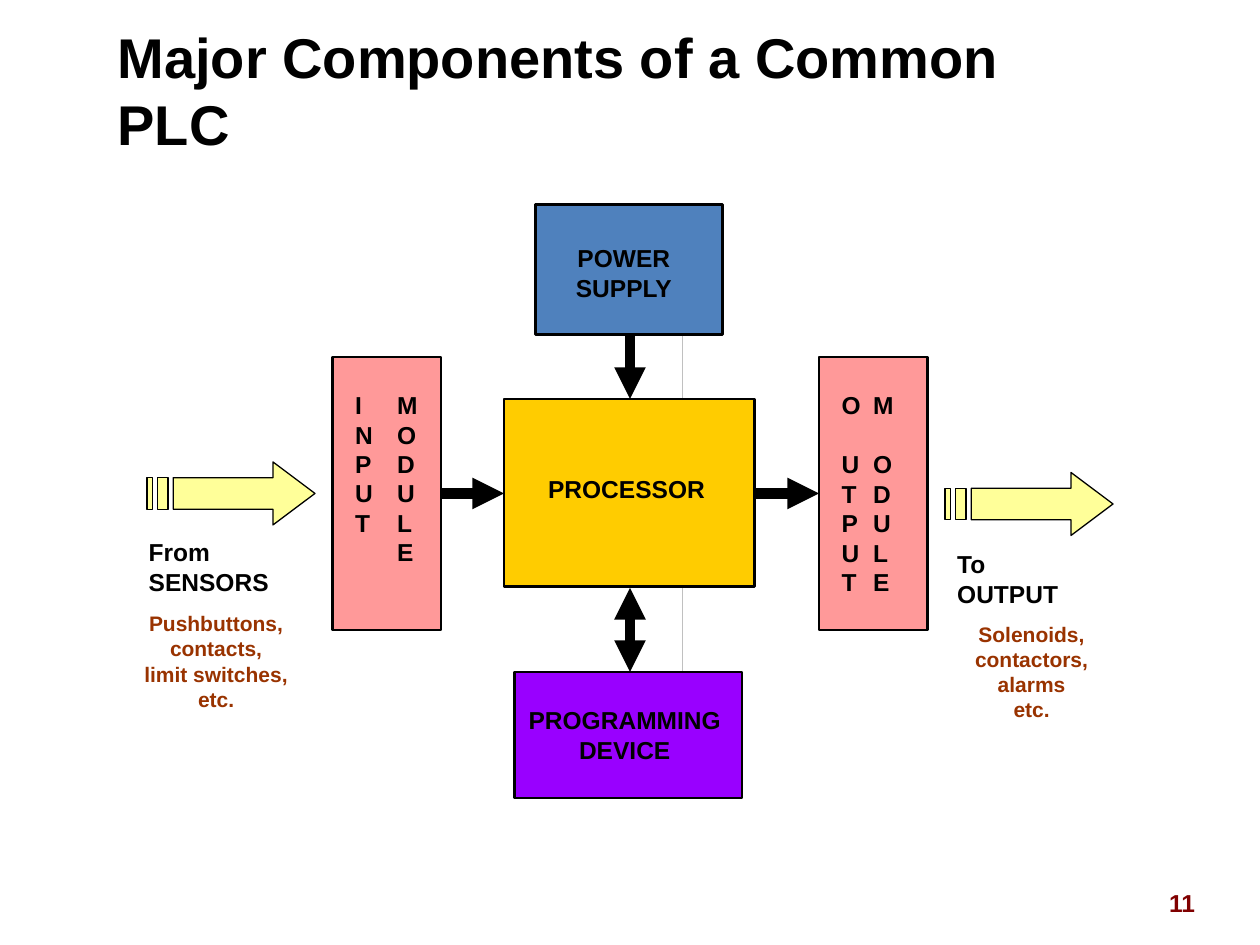
from dataclasses import dataclass

from lxml import etree
from pptx import Presentation
from pptx.dml.color import RGBColor
from pptx.enum.shapes import MSO_CONNECTOR, MSO_SHAPE
from pptx.enum.text import MSO_ANCHOR, MSO_AUTO_SIZE, PP_ALIGN
from pptx.oxml.ns import qn
from pptx.util import Pt

LEFT, MID, RIGHT = PP_ALIGN.LEFT, PP_ALIGN.CENTER, PP_ALIGN.RIGHT
TOP = MSO_ANCHOR.TOP
NO_FIT = MSO_AUTO_SIZE.NONE
RECT = MSO_SHAPE.RECTANGLE
STRAIGHT = MSO_CONNECTOR.STRAIGHT


@dataclass(frozen=True)
class Theme:
    font: str = "Arial"
    ink: str = "000000"
    page: str = "800000"
    note: str = "993300"
    power: str = "4F81BD"
    core: str = "FFCC00"
    module: str = "FF9999"
    device: str = "9900FF"
    flow: str = "FFFF99"
    rule: str = "C0C0C0"
    head: int = 32
    body: int = 14
    small: int = 12


THEME = Theme()


def rgb(code):
    return RGBColor.from_string(code)


def write(frame, text, size=THEME.body, color=THEME.ink, align=LEFT,
          inset=(1, 1), tab=None, gap=0):
    """Fill a frame; tab sets a second column, gap the space below line one."""
    frame.text = text
    frame.word_wrap = True
    frame.auto_size = NO_FIT
    frame.vertical_anchor = TOP
    frame.margin_left = frame.margin_right = Pt(inset[0])
    frame.margin_top = frame.margin_bottom = Pt(inset[1])
    for row, para in enumerate(frame.paragraphs):
        para.alignment = align
        if gap and row == 0:
            para.space_after = Pt(gap)
        if tab:
            stops = etree.SubElement(para._p.get_or_add_pPr(), qn("a:tabLst"))
            etree.SubElement(stops, qn("a:tab"), pos=str(Pt(tab)), algn="l")
        for run in para.runs:
            run.font.name = THEME.font
            run.font.size = Pt(size)
            run.font.bold = True
            run.font.color.rgb = rgb(color)


def label(slide, area, text, **style):
    box = slide.shapes.add_textbox(*map(Pt, area))
    write(box.text_frame, text, **style)


def paint(shape, fill, width):
    shape.shadow.inherit = False
    shape.fill.solid()
    shape.fill.fore_color.rgb = rgb(fill)
    shape.line.color.rgb = rgb(THEME.ink)
    shape.line.width = Pt(width)


def block(slide, area, fill):
    paint(slide.shapes.add_shape(RECT, *map(Pt, area)), fill, 1.5)


def module(slide, left, text, **style):
    """Draw a tall block with two words set letter by letter."""
    block(slide, (left, 204, 62, 156), THEME.module)
    label(slide, (left + 12, 222, 42, 114), text, **style)


def link(slide, ends, color=THEME.ink, width=6, tips=()):
    line = slide.shapes.add_connector(STRAIGHT, *map(Pt, ends))
    line.line.color.rgb = rgb(color)
    line.line.width = Pt(width)
    for tip in tips:
        etree.SubElement(line.line._get_or_add_ln(), qn(tip), type="triangle")
    etree.SubElement(line._element.spPr, qn("a:effectLst"))


def flow(slide, left, top):
    """Draw a block arrow with two stripes at its tail."""
    def bar(start, end):
        return [(start, 9), (start, 27), (end, 27), (end, 9)]

    arrow = [(72, 0), (72, 9), (15, 9), (15, 27), (72, 27), (72, 36), (96, 18)]
    pen = None
    for part in (arrow, bar(6, 12), bar(0, 3)):
        first, *rest = [(Pt(left + x), Pt(top + y)) for x, y in part]
        if pen is None:
            pen = slide.shapes.build_freeform(*first)
        else:
            pen.move_to(*first)
        pen.add_line_segments(rest, close=True)
    paint(pen.convert_to_shape(), THEME.flow, 0.75)


def title(slide, text):
    head = slide.shapes.title
    head.left, head.top, head.width, head.height = map(Pt, (60, 9, 588, 45))
    write(head.text_frame, text, size=THEME.head, inset=(7.2, 3.6))


def main():
    deck = Presentation()
    deck.slide_width, deck.slide_height = Pt(720), Pt(540)
    slide = deck.slides.add_slide(deck.slide_layouts[5])
    title(slide, "Major Components of a Common PLC")
    label(slide, (660, 504, 30, 24), "11", color=THEME.page,
          align=RIGHT, inset=(7.2, 3.6))

    link(slide, (390, 182, 390, 394), color=THEME.rule, width=0.25)
    block(slide, (288, 228, 143, 107), THEME.core)
    label(slide, (306, 270, 104, 18), "PROCESSOR", align=MID)
    block(slide, (306, 117, 107, 74), THEME.power)
    label(slide, (312, 138, 89, 39), "POWER\nSUPPLY", align=MID)
    block(slide, (294, 384, 130, 72), THEME.device)
    label(slide, (294, 402, 126, 30), "PROGRAMMING DEVICE", align=MID)
    module(slide, 190, "I\tM\nN\tO\nP\tD\nU\tU\nT\tL\n\tE", tab=24)
    module(slide, 468, "O\tM\nU\tO\nT\tD\nP\tU\nU\tL\nT\tE", tab=18, gap=17)

    for ends in ((252, 282, 288, 282), (432, 282, 468, 282),
                 (360, 192, 360, 228)):
        link(slide, ends, tips=("a:tailEnd",))
    link(slide, (360, 336, 360, 384), tips=("a:headEnd", "a:tailEnd"))

    flow(slide, 84, 264)
    label(slide, (84, 306, 78, 41), "From SENSORS")
    flow(slide, 540, 270)
    label(slide, (546, 313, 78, 41), "To\nOUTPUT")
    notes = (
        (78, 348, "Pushbuttons,\ncontacts,\nlimit switches,\netc."),
        (544, 354, "Solenoids, contactors, alarms\netc."),
    )
    for left, top, text in notes:
        label(slide, (left, top, 91, 60), text, size=THEME.small,
              color=THEME.note, align=MID)
    deck.save("out.pptx")


if __name__ == "__main__":
    main()
